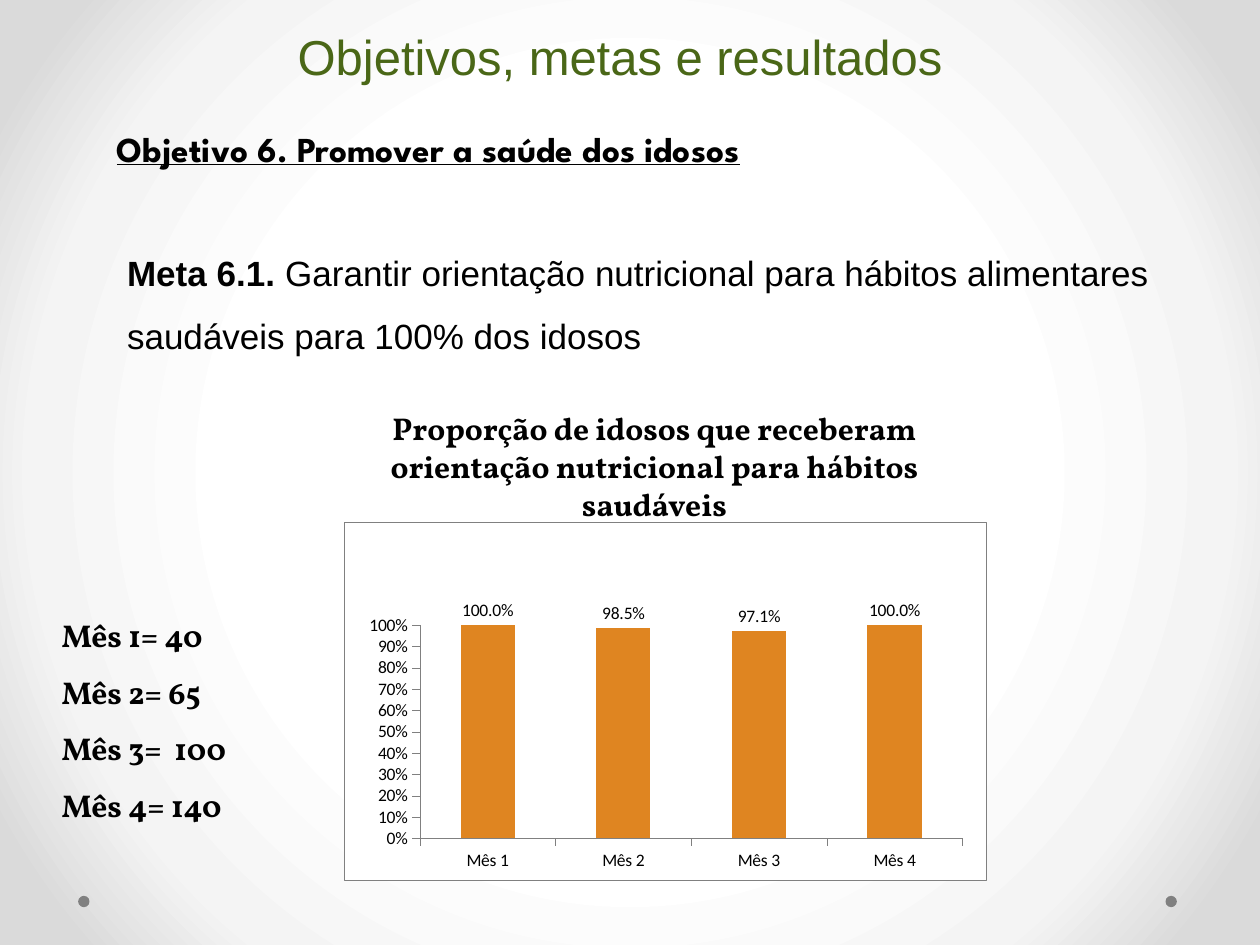
from lxml import etree
from pptx import Presentation
from pptx import util as u
from pptx.chart.data import CategoryChartData
from pptx.dml.color import RGBColor
from pptx.enum import chart as charts, shapes, text
from pptx.oxml import parse_xml
from pptx.oxml.ns import nsdecls, qn

THEME = {
    "title": "4A6717", "ink": "000000", "bar": "DF8521",
    "grey": "808080", "white": "FFFFFF",
    "title_size": 28, "body_size": 20, "note_size": 18, "chart_size": 10,
    "sans": "Arial", "heading": "League Spartan", "serif": "Vollkorn", "chart_font": "Calibri",
    "backdrop": [(50, "FFFFFF"), (76, "F4F4F4"), (92, "DADADA")],
}
TITLE = "Objetivos, metas e resultados"
OBJECTIVE = "Objetivo 6. Promover a saúde dos idosos"
GOAL = [
    ("Meta 6.1. ", True),
    ("Garantir orientação nutricional para hábitos alimentares saudáveis para 100% dos idosos", False),
]
CHART_TITLE = "Proporção de idosos que receberam orientação nutricional para hábitos saudáveis"
COUNTS = ["Mês 1= 40", "Mês 2= 65", "Mês 3=  100", "Mês 4= 140"]
SHARES = {"Mês 1": 1, "Mês 2": 0.985, "Mês 3": 0.971, "Mês 4": 1}
PLOT_AREA = {"x": 0.118, "y": 0.288, "w": 0.845, "h": 0.595}
DOT_LEFTS = [0.62, 9.25]


def color(name):
    return RGBColor.from_string(THEME[name])


def add_text(page, place, paragraphs, *, size, font, ink="ink", bold=False, underline=None,
             align=text.PP_ALIGN.LEFT, spacing=None, before=None, anchor=text.MSO_ANCHOR.TOP):
    frame = page.shapes.add_textbox(*map(u.Inches, place)).text_frame
    frame.word_wrap = True
    frame.vertical_anchor = anchor
    for index, content in enumerate(paragraphs):
        para = frame.paragraphs[0] if index == 0 else frame.add_paragraph()
        para.alignment, para.line_spacing, para.space_before = align, spacing, before
        for words, strong in [(content, bold)] if isinstance(content, str) else content:
            span = para.add_run()
            span.text = words
            span.font.name, span.font.size = THEME[font], u.Pt(THEME[size])
            span.font.bold, span.font.underline = strong, underline
            span.font.color.rgb = color(ink)


def paint_backdrop(page):
    page.background.fill.gradient()
    stops = "".join(
        f'<a:gs pos="{position * 1000}"><a:srgbClr val="{shade}"/></a:gs>'
        for position, shade in THEME["backdrop"]
    )
    gradient = page.background._cSld.find(".//" + qn("a:gradFill"))
    gradient.getparent().replace(gradient, parse_xml(
        f'<a:gradFill {nsdecls("a")} rotWithShape="1"><a:gsLst>{stops}</a:gsLst>'
        '<a:path path="circle"><a:fillToRect l="50000" t="50000" r="50000" b="50000"/></a:path>'
        '</a:gradFill>'
    ))


def add_dots(page):
    for left in DOT_LEFTS:
        dot = page.shapes.add_shape(
            shapes.MSO_SHAPE.OVAL, *map(u.Inches, (left, 7.11, 0.09, 0.09)))
        dot.shadow.inherit = False
        dot.fill.solid()
        dot.fill.fore_color.rgb = color("grey")
        dot.line.fill.background()


def style_font(font):
    font.name, font.size = THEME["chart_font"], u.Pt(THEME["chart_size"])
    font.color.rgb = color("ink")


def frame_chart(chart):
    area = parse_xml(
        f'<c:spPr {nsdecls("c", "a")}><a:solidFill><a:srgbClr val="{THEME["white"]}"/></a:solidFill>'
        f'<a:ln w="{u.Pt(0.25)}"><a:solidFill><a:srgbClr val="{THEME["grey"]}"/></a:solidFill></a:ln>'
        '</c:spPr>'
    )
    chart._chartSpace.chart.addnext(area)
    plot_area = chart._chartSpace.chart.plotArea
    plot_area.append(parse_xml(
        f'<c:spPr {nsdecls("c", "a")}><a:solidFill><a:srgbClr val="{THEME["white"]}"/></a:solidFill>'
        '</c:spPr>'
    ))
    for old in plot_area.findall(qn("c:layout")):
        plot_area.remove(old)
    layout = etree.Element(qn("c:layout"))
    manual = etree.SubElement(layout, qn("c:manualLayout"))
    settings = {"layoutTarget": "inner", "xMode": "edge", "yMode": "edge", **PLOT_AREA}
    for name, value in settings.items():
        etree.SubElement(manual, qn(f"c:{name}")).set("val", str(value))
    plot_area.insert(0, layout)


def add_share_chart(page):
    data = CategoryChartData()
    data.categories = list(SHARES)
    data.add_series("Series 1", list(SHARES.values()))
    chart = page.shapes.add_chart(
        charts.XL_CHART_TYPE.COLUMN_CLUSTERED, *map(u.Inches, (2.73, 4.14, 5.1, 2.85)), data).chart
    chart.has_legend = chart.has_title = False
    style_font(chart.font)
    frame_chart(chart)

    for axis in (chart.category_axis, chart.value_axis):
        axis.has_major_gridlines = False
        axis.major_tick_mark = charts.XL_TICK_MARK.OUTSIDE
        axis.minor_tick_mark = charts.XL_TICK_MARK.NONE
        axis.format.line.color.rgb = color("grey")
        axis.format.line.width = u.Pt(0.25)
        style_font(axis.tick_labels.font)
    scale = chart.value_axis
    scale.minimum_scale, scale.maximum_scale, scale.major_unit = 0, 1, 0.1
    scale.tick_labels.number_format = "0%"
    scale.tick_labels.number_format_is_linked = False

    plot = chart.plots[0]
    plot.gap_width, plot.vary_by_categories = 150, False
    bars = plot.series[0]
    bars.format.fill.solid()
    bars.format.fill.fore_color.rgb = color("bar")
    labels = bars.data_labels
    labels.show_value = True
    labels.number_format, labels.number_format_is_linked = "0.0%", False
    labels.position = charts.XL_LABEL_POSITION.OUTSIDE_END
    style_font(labels.font)


def main():
    deck = Presentation()
    deck.slide_width, deck.slide_height = u.Inches(10), u.Inches(7.5)
    page = deck.slides.add_slide(deck.slide_layouts[6])
    paint_backdrop(page)
    add_dots(page)
    add_text(page, (0.42, 0.13, 9, 0.6), [TITLE], size="title_size", font="sans", ink="title",
             align=text.PP_ALIGN.CENTER, spacing=u.Pt(58), anchor=text.MSO_ANCHOR.BOTTOM)
    add_text(page, (0.83, 0.96, 8.65, 0.74), [OBJECTIVE], size="body_size", font="heading",
             bold=True, underline=True, before=u.Pt(4))
    add_text(page, (0.91, 1.78, 8.31, 2.42), [GOAL], size="body_size", font="sans",
             align=text.PP_ALIGN.JUSTIFY, spacing=1.5)
    add_share_chart(page)
    add_text(page, (2.58, 3.2, 5.23, 1.31), [CHART_TITLE], size="note_size", font="serif",
             bold=True, align=text.PP_ALIGN.CENTER)
    add_text(page, (0.39, 4.69, 1.8, 1.92), COUNTS, size="note_size", font="serif",
             bold=True, spacing=1.5)
    deck.save("out.pptx")


if __name__ == "__main__":
    main()
